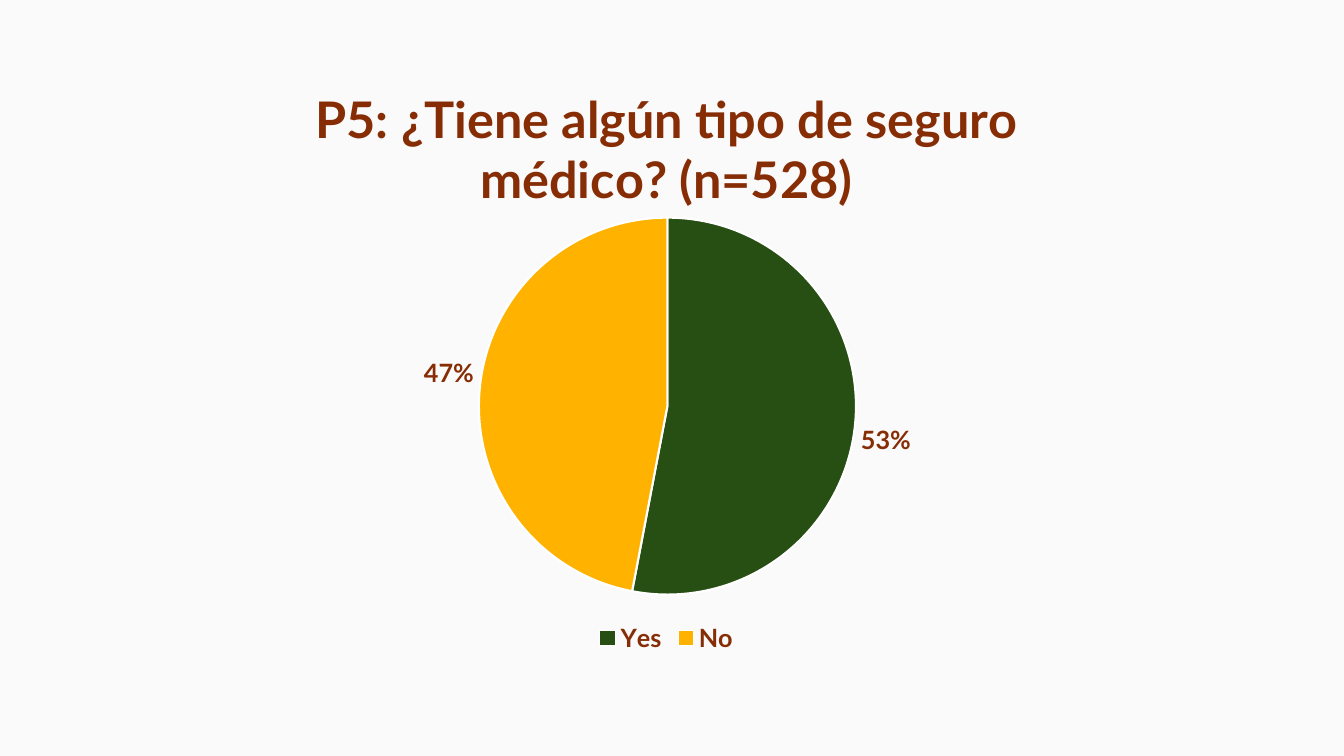
"""Build a slide with a pie chart of health insurance coverage."""
from lxml import etree
from pptx import Presentation
from pptx.chart.data import CategoryChartData
from pptx.dml.color import RGBColor
from pptx.enum import chart as ch
from pptx.oxml import ns
from pptx.util import Inches, Pt

TITLE = "P5: ¿Tiene algún tipo de seguro médico? (n=528)"
BACKGROUND = RGBColor(0xFA, 0xFA, 0xFA)
BROWN = RGBColor(0x86, 0x2D, 0x05)
WHITE = RGBColor(0xFF, 0xFF, 0xFF)
ANSWERS = [
    ("Yes", 0.53, RGBColor(0x27, 0x4E, 0x13)),
    ("No", 0.47, RGBColor(0xFF, 0xB2, 0x00)),
]
CHART_BOX = (1.95, 0.56, 9.32, 5.97)
PIE_BOX = (4.75, 2.16, 3.74, 3.74)


def style_font(font, size, name="Lato", bold=True):
    font.name = name
    font.size = Pt(size)
    font.bold = bold
    font.color.rgb = BROWN


def place_pie(plot_area):
    for old in plot_area.findall(ns.qn("c:layout")):
        plot_area.remove(old)
    layout = etree.Element(ns.qn("c:layout"))
    manual = etree.SubElement(layout, ns.qn("c:manualLayout"))
    left, top, width, height = CHART_BOX
    x, y, w, h = PIE_BOX
    settings = [
        ("layoutTarget", "inner"), ("xMode", "edge"), ("yMode", "edge"),
        ("x", (x - left) / width), ("y", (y - top) / height),
        ("w", w / width), ("h", h / height),
    ]
    for tag, value in settings:
        etree.SubElement(manual, ns.qn(f"c:{tag}")).set("val", str(value))
    plot_area.insert(0, layout)


def add_pie(s):
    data = CategoryChartData(number_format="0%")
    data.categories = [name for name, _, _ in ANSWERS]
    data.add_series("Series 1", [share for _, share, _ in ANSWERS])
    box = [Inches(v) for v in CHART_BOX]
    chart = s.shapes.add_chart(ch.XL_CHART_TYPE.PIE, *box, data).chart
    style_font(chart.font, 10, "Arial", False)

    chart.has_title = True
    chart.chart_title.include_in_layout = False
    r = chart.chart_title.text_frame.paragraphs[0].add_run()
    r.text = TITLE
    style_font(r.font, 36)

    chart.has_legend = True
    chart.legend.position = ch.XL_LEGEND_POSITION.BOTTOM
    chart.legend.include_in_layout = False
    style_font(chart.legend.font, 18)

    plot = chart.plots[0]
    plot.vary_by_categories = True
    for i, (_, _, color) in enumerate(ANSWERS):
        fmt = plot.series[0].points[i].format
        fmt.fill.solid()
        fmt.fill.fore_color.rgb = color
        fmt.line.color.rgb = WHITE
        fmt.line.width = Pt(1.5)

    labels = plot.series[0].data_labels
    labels.show_value = True
    labels.number_format = "0%"
    labels.number_format_is_linked = False
    labels.position = ch.XL_LABEL_POSITION.OUTSIDE_END
    style_font(labels.font, 18)
    place_pie(plot._element.getparent())


def main():
    prs = Presentation()
    prs.slide_width, prs.slide_height = Inches(13.33), Inches(7.5)
    s = prs.slides.add_slide(prs.slide_layouts[6])
    s.background.fill.solid()
    s.background.fill.fore_color.rgb = BACKGROUND
    add_pie(s)
    prs.save("out.pptx")


if __name__ == "__main__":
    main()
